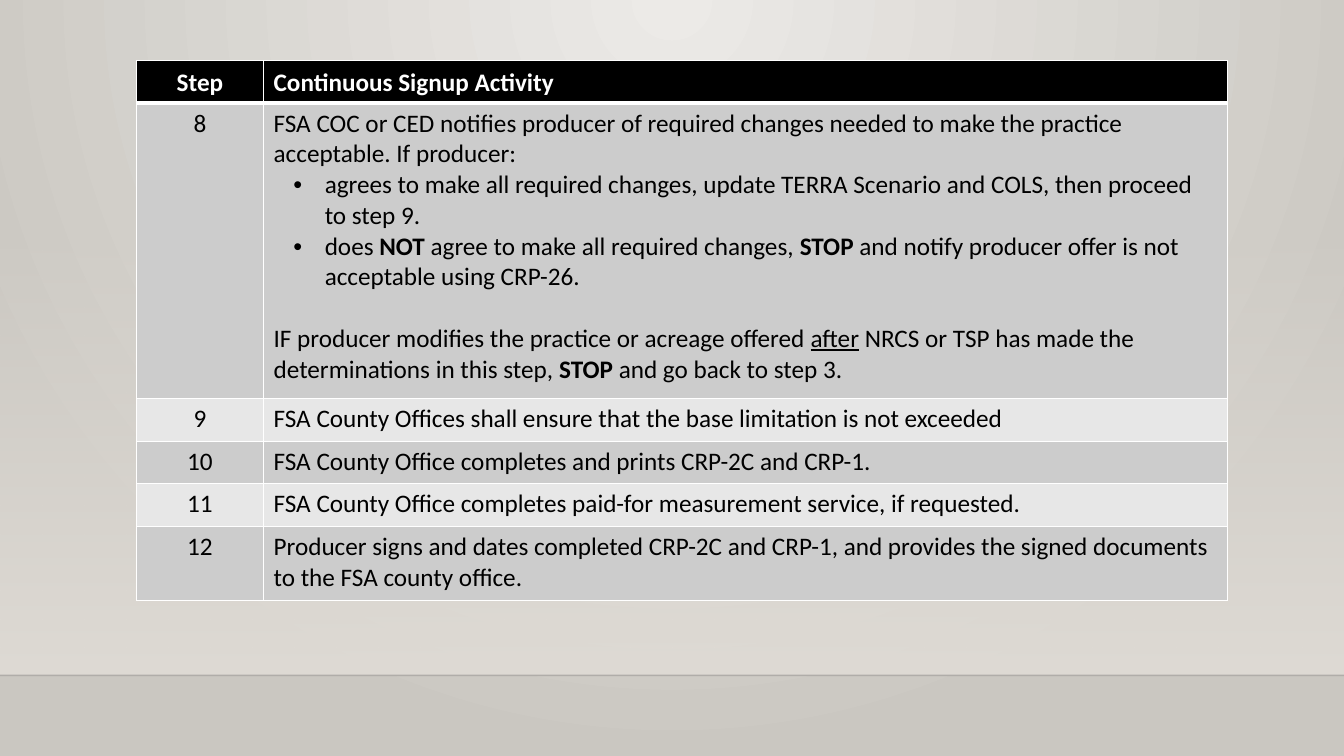
from dataclasses import dataclass

from pptx import Presentation
from pptx.dml.color import RGBColor as RGB
from pptx.enum.shapes import MSO_CONNECTOR as Link, MSO_SHAPE as Form
from pptx.enum.text import MSO_ANCHOR as Anchor, PP_ALIGN as Align
from pptx.oxml import parse_xml
from pptx.oxml.ns import nsdecls, qn
from pptx.oxml.xmlchemy import OxmlElement as Node
from pptx.slide import Slide
from pptx.table import _Cell as Cell
from pptx.util import Pt

WHITE = RGB(0xFF, 0xFF, 0xFF)
BLACK = RGB(0, 0, 0)
DARK = RGB(0xCC, 0xCC, 0xCC)
LIGHT = RGB(0xE7, 0xE7, 0xE7)
GLOW = RGB(0xEC, 0xEA, 0xE7)
EDGE = RGB(0xCA, 0xC7, 0xC1)
WALL = RGB(0xDF, 0xDB, 0xD5)
RULE = RGB(0, 0, 1)
WIDE, HIGH, FLOOR, TOP = 960, 540, 482.4, 159.1
COLS = (90.9, 688.3)


@dataclass
class Run:
    text: str
    bold: bool = False
    under: bool = False


@dataclass
class Para:
    runs: list[Run]
    bullet: bool = False
    gap: float = 0


@dataclass
class Step:
    label: str
    paras: list[Para]
    height: float = 30.5


def line(text: str) -> list[Para]:
    return [Para([Run(text)])]


STEPS = [
    Step("Step", line("Continuous Signup Activity")),
    Step("8", [
        Para([Run("FSA COC or CED notifies producer of required changes needed to make "
                  "the practice acceptable. If producer:")]),
        Para([Run("agrees to make all required changes, update TERRA Scenario and COLS, "
                  "then proceed to step 9.")], bullet=True),
        Para([Run("does "), Run("NOT", bold=True),
              Run(" agree to make all required changes, "), Run("STOP", bold=True),
              Run(" and notify producer offer is not acceptable using CRP-26.")],
             bullet=True),
        Para([Run("IF producer modifies the practice or acreage offered "),
              Run("after", under=True),
              Run(" NRCS or TSP has made the determinations in this step, "),
              Run("STOP", bold=True), Run(" and go back to step 3.")], gap=22),
    ], 211),
    Step("9", line("FSA County Offices shall ensure that the base limitation "
                   "is not exceeded")),
    Step("10", line("FSA County Office completes and prints CRP-2C and CRP-1.")),
    Step("11", line("FSA County Office completes paid-for measurement service, "
                    "if requested.")),
    Step("12", line("Producer signs and dates completed CRP-2C and CRP-1, and provides "
                    "the signed documents to the FSA county office."), 52.7),
]


def fade(host, share: int) -> None:
    alpha = Node("a:alpha")
    alpha.set("val", str(share * 1000))
    next(host.iter(qn("a:srgbClr"))).append(alpha)


def blend(fill, first: RGB, last: RGB) -> None:
    fill.gradient()
    for stop, tone in zip(fill.gradient_stops, (first, last)):
        stop.color.rgb = tone


def draw_back(slide: Slide) -> None:
    blend(slide.background.fill, GLOW, EDGE)
    grad = next(slide.element.iter(qn("a:gradFill")))
    grad.replace(grad.find(qn("a:lin")), parse_xml(
        f'<a:path {nsdecls("a")} path="circle">'
        '<a:fillToRect l="43000" t="0" r="43000" b="100000"/></a:path>'))

    wall = slide.shapes.add_shape(Form.RECTANGLE, 0, Pt(TOP), Pt(WIDE), Pt(FLOOR - TOP))
    wall.shadow.inherit = False
    blend(wall.fill, WALL, WALL)
    wall.fill.gradient_angle = 270
    fade(wall.element.spPr, 0)
    wall.line.fill.background()

    edge = slide.shapes.add_connector(Link.STRAIGHT, 0, Pt(FLOOR), Pt(WIDE), Pt(FLOOR))
    edge.line.color.rgb = RULE
    edge.line.width = Pt(1)
    props = edge.element.spPr
    fade(props, 20)
    props.append(Node("a:effectLst"))


def frame(cell: Cell, row: int) -> None:
    props = cell._tc.get_or_add_tcPr()
    thick = {0: "B", 1: "T"}.get(row)
    for side in "LRTB":
        width = Pt(3 if side == thick else 1)
        props.append(parse_xml(
            f'<a:ln{side} {nsdecls("a")} w="{width}"><a:solidFill>'
            f'<a:srgbClr val="{WHITE}"/></a:solidFill></a:ln{side}>'))


def write(cell: Cell, paras: list[Para], align: Align, head: bool) -> None:
    for i, para in enumerate(paras):
        out = cell.text_frame.add_paragraph() if i else cell.text_frame.paragraphs[0]
        out.alignment = align
        if para.gap:
            out.space_before = Pt(para.gap)
        if para.bullet:
            props = out._p.get_or_add_pPr()
            props.set("marL", str(Pt(36.5)))
            props.set("indent", str(Pt(-22.5)))
            face, mark = Node("a:buFont"), Node("a:buChar")
            face.set("typeface", "Arial")
            mark.set("char", "•")
            props.extend((face, mark))
        font = out.font
        font.name = "Calibri"
        font.size = Pt(18)
        font.bold = head
        font.color.rgb = WHITE if head else BLACK
        for part in para.runs:
            run = out.add_run()
            run.text = part.text
            if part.bold:
                run.font.bold = True
            if part.under:
                run.font.underline = True


def draw_steps(slide: Slide) -> None:
    table = slide.shapes.add_table(
        len(STEPS), len(COLS), Pt(97.4), Pt(43.2), Pt(sum(COLS)),
        Pt(sum(step.height for step in STEPS))).table
    table.horz_banding = False
    table.first_row = False
    for col, width in zip(table.columns, COLS):
        col.width = Pt(width)
    for i, step in enumerate(STEPS):
        head = i == 0
        table.rows[i].height = Pt(step.height)
        texts = (line(step.label), Align.CENTER), (step.paras, Align.LEFT)
        for j, (paras, align) in enumerate(texts):
            cell = table.cell(i, j)
            frame(cell, i)
            cell.fill.solid()
            cell.fill.fore_color.rgb = BLACK if head else DARK if i % 2 else LIGHT
            cell.vertical_anchor = Anchor.BOTTOM if head else Anchor.TOP
            write(cell, paras, align, head)


def main() -> None:
    deck = Presentation()
    deck.slide_width, deck.slide_height = Pt(WIDE), Pt(HIGH)
    slide = deck.slides.add_slide(deck.slide_layouts[6])
    draw_back(slide)
    draw_steps(slide)
    deck.save("out.pptx")


if __name__ == "__main__":
    main()
